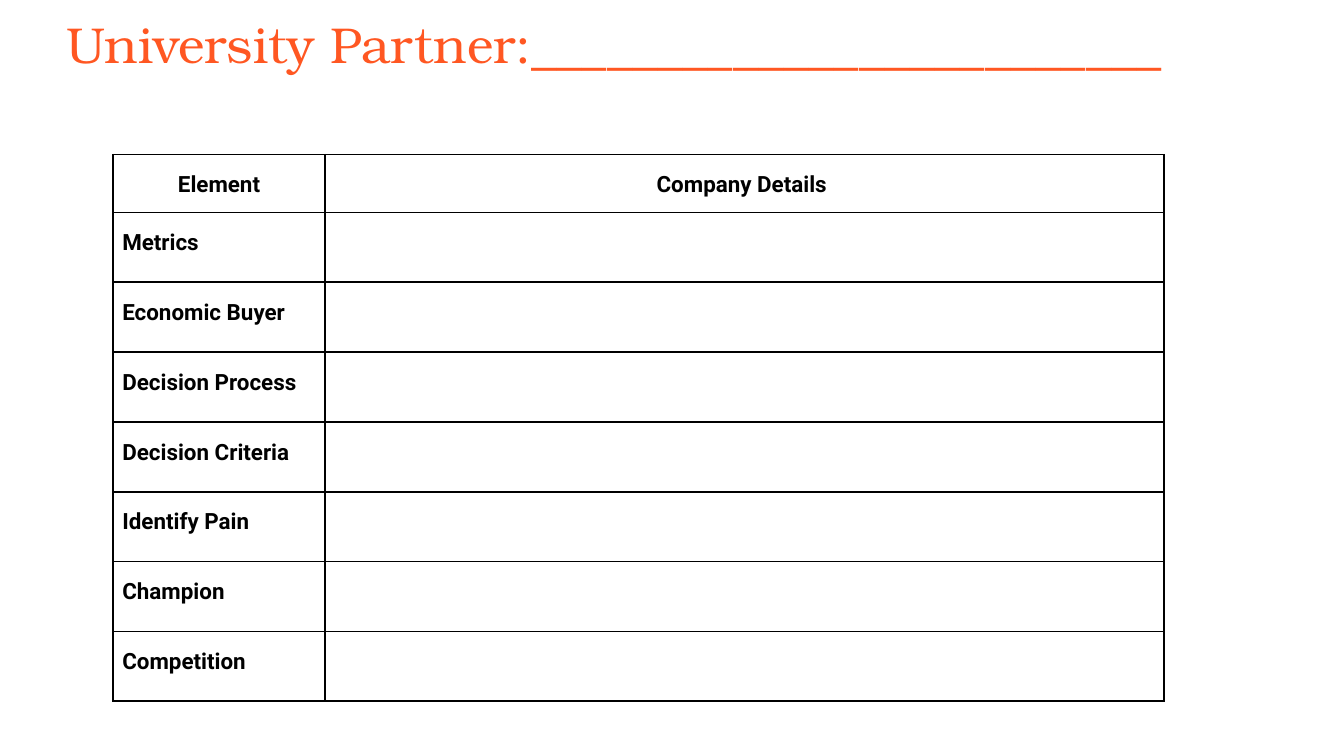
import pptx
import pptx.dml.color
import pptx.enum.text
import pptx.oxml
import pptx.oxml.ns
import pptx.util
from pptx.util import Inches

ORANGE = pptx.dml.color.RGBColor(0xFF, 0x57, 0x22)
BLACK = pptx.dml.color.RGBColor(0, 0, 0)
CENTER = pptx.enum.text.PP_ALIGN.CENTER
LEFT = pptx.enum.text.PP_ALIGN.LEFT

HEADERS = ["Element", "Company Details "]
ELEMENTS = ["Metrics", "Economic Buyer", "Decision Process", "Decision Criteria",
            "Identify Pain", "Champion", "Competition"]


def style_font(font, name, size, color, bold=False):
    font.name = name
    font.size = pptx.util.Pt(size)
    font.color.rgb = color
    font.bold = bold


def add_title(slide, left, top, width, height):
    tf = slide.shapes.add_textbox(left, top, width, height).text_frame
    tf.word_wrap = True
    tf.margin_left = tf.margin_right = Inches(0.1)
    tf.margin_top = tf.margin_bottom = Inches(0.1)
    p = tf.paragraphs[0]
    p.text = "University Partner:" + "_" * 25
    style_font(p.font, "TeX Gyre Bonum", 27, ORANGE)


def set_borders(cell, color, width):
    tc_pr = cell._tc.get_or_add_tcPr()
    for i, side in enumerate(("lnL", "lnR", "lnT", "lnB")):
        tc_pr.insert(i, pptx.oxml.parse_xml(
            f'<a:{side} {pptx.oxml.ns.nsdecls("a")} w="{int(width)}">'
            f'<a:solidFill><a:srgbClr val="{color}"/></a:solidFill></a:{side}>'))


def fill_cell(cell, text, align):
    cell.margin_left = cell.margin_right = Inches(0.07)
    cell.margin_top = cell.margin_bottom = Inches(0.1)
    p = cell.text_frame.paragraphs[0]
    p.text = text
    p.alignment = align
    p.line_spacing = 1.15
    style_font(p.font, "Roboto", 12, BLACK, bold=True)


def add_details_table(slide, left, top, width, height):
    rows = len(ELEMENTS) + 1
    table = slide.shapes.add_table(rows, 2, left, top, width, height).table
    table.first_row = table.horz_banding = False

    # Narrow label column, short header row
    table.columns[0].width = Inches(1.58)
    table.columns[1].width = width - Inches(1.58)
    for row in table.rows:
        row.height = Inches(0.52)
    table.rows[0].height = Inches(0.39)

    for cell in table.iter_cells():
        cell.fill.background()
        set_borders(cell, BLACK, pptx.util.Pt(1))

    for col, header in enumerate(HEADERS):
        fill_cell(table.cell(0, col), header, CENTER)
    for row, element in enumerate(ELEMENTS, start=1):
        fill_cell(table.cell(row, 0), element, LEFT)


def main():
    prs = pptx.Presentation()
    # Widescreen, 16:9
    prs.slide_width = Inches(10)
    prs.slide_height = prs.slide_width * 9 // 16
    slide = prs.slides.add_slide(prs.slide_layouts[6])
    add_title(slide, Inches(0.4), Inches(0), Inches(9.32), Inches(0.63))
    add_details_table(slide, Inches(0.84), Inches(1.15), Inches(7.82), Inches(4.05))
    prs.save("out.pptx")


if __name__ == "__main__":
    main()
